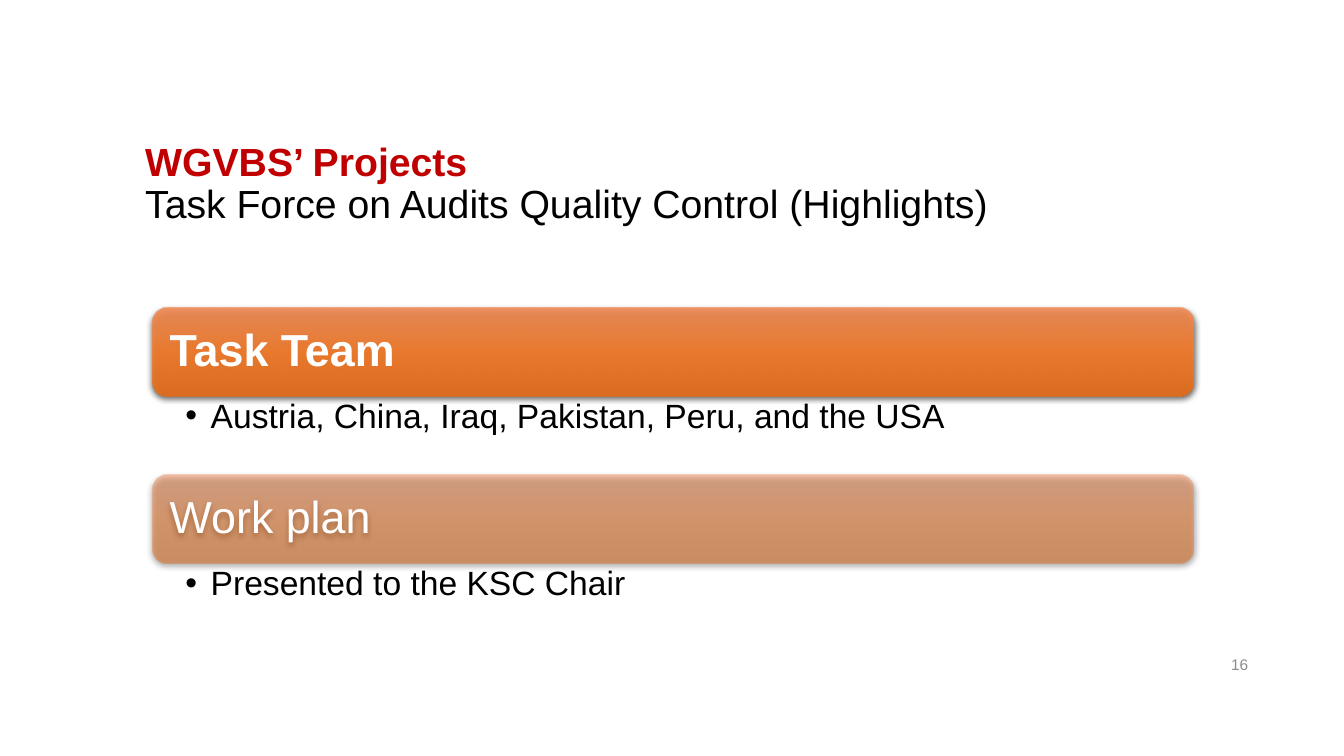
import dataclasses

import lxml.etree
import pptx
import pptx.dml.color
import pptx.enum.shapes
import pptx.enum.text
import pptx.oxml
import pptx.oxml.ns
import pptx.shapes.autoshape
import pptx.slide
import pptx.text.text
import pptx.util

Inches = pptx.util.Inches
ALIGN = pptx.enum.text.PP_ALIGN
ANCHOR = pptx.enum.text.MSO_ANCHOR

COLORS = {
    "heading": "C00000",
    "text": "000000",
    "label": "FFFFFF",
    "number": "8C8C8C",
    "bar_top": "F18C57",
    "bar_middle": "F67B28",
    "bar_bottom": "E56C19",
    "shadow": "000000",
}
LEFT, WIDTH = 1.51, 10.33
FIRST_TOP, BAR_HEIGHT, LIST_HEIGHT = 3.05, 0.88, 0.78
SECTION_STEP = BAR_HEIGHT + LIST_HEIGHT


@dataclasses.dataclass
class Section:
    label: str
    detail: str
    opacity: int
    bold: bool


SECTIONS = [
    Section("Task Team", "Austria, China, Iraq, Pakistan, Peru, and the USA", 90, True),
    Section("Work plan", "Presented to the KSC Chair", 50, False),
]


def write(paragraph: pptx.text.text._Paragraph, text: str, *, size: float,
          color: str, bold: bool = False) -> None:
    run = paragraph.add_run()
    run.text = text
    run.font.name = "Arial"
    run.font.size = pptx.util.Pt(size)
    run.font.bold = bold
    run.font.color.rgb = pptx.dml.color.RGBColor.from_string(COLORS[color])


def place(shape: pptx.shapes.autoshape.Shape, left: float, top: float,
          width: float, height: float) -> None:
    shape.left, shape.top = Inches(left), Inches(top)
    shape.width, shape.height = Inches(width), Inches(height)


def prepare_text(shape: pptx.shapes.autoshape.Shape, *, anchor: ANCHOR,
                 align: ALIGN = ALIGN.LEFT,
                 insets: tuple[float, float, float, float] = (0.1, 0.05, 0.1, 0.05),
                 ) -> pptx.text.text._Paragraph:
    """Set up the text frame and return its first paragraph."""
    frame = shape.text_frame
    frame.word_wrap = True
    frame.auto_size = pptx.enum.text.MSO_AUTO_SIZE.NONE
    frame.vertical_anchor = anchor
    (frame.margin_left, frame.margin_top,
     frame.margin_right, frame.margin_bottom) = map(Inches, insets)
    paragraph = frame.paragraphs[0]
    paragraph.alignment = align
    paragraph.line_spacing = 0.9
    paragraph.space_before = pptx.util.Pt(0)
    return paragraph


def apply_glass_style(bar: pptx.shapes.autoshape.Shape, opacity: int) -> None:
    """Give the bar a translucent vertical gradient and a soft shadow."""
    bar.line.fill.background()
    stops = "".join(
        f'<a:gs pos="{position * 1000}"><a:srgbClr val="{COLORS[name]}">'
        f'<a:alpha val="{opacity * 1000}"/></a:srgbClr></a:gs>'
        for position, name in ((0, "bar_top"), (50, "bar_middle"), (100, "bar_bottom"))
    )
    namespace = pptx.oxml.ns.nsdecls("a")
    gradient = pptx.oxml.parse_xml(
        f'<a:gradFill {namespace} rotWithShape="1"><a:gsLst>{stops}</a:gsLst>'
        '<a:lin ang="5400000" scaled="0"/></a:gradFill>')
    effects = pptx.oxml.parse_xml(
        f'<a:effectLst {namespace}><a:outerShdw blurRad="{pptx.util.Pt(4.5)}" '
        f'dist="{pptx.util.Pt(1.5)}" dir="5400000" algn="ctr" rotWithShape="0">'
        f'<a:srgbClr val="{COLORS["shadow"]}"><a:alpha val="63000"/></a:srgbClr>'
        '</a:outerShdw></a:effectLst>')
    properties = bar._element.spPr
    properties.find(pptx.oxml.ns.qn("a:prstGeom")).addnext(gradient)
    properties.append(effects)


def add_bullet(paragraph: pptx.text.text._Paragraph) -> None:
    paragraph.level = 1
    properties = paragraph._p.get_or_add_pPr()
    properties.set("marL", str(Inches(0.25)))
    properties.set("indent", str(Inches(-0.25)))
    font = lxml.etree.SubElement(properties, pptx.oxml.ns.qn("a:buFont"))
    font.set("typeface", "Arial")
    bullet = lxml.etree.SubElement(properties, pptx.oxml.ns.qn("a:buChar"))
    bullet.set("char", "•")


def add_section(slide: pptx.slide.Slide, section: Section,
                details: pptx.shapes.autoshape.Shape, top: float) -> None:
    bar = slide.shapes.add_shape(
        pptx.enum.shapes.MSO_SHAPE.ROUNDED_RECTANGLE,
        Inches(LEFT), Inches(top), Inches(WIDTH), Inches(BAR_HEIGHT))
    apply_glass_style(bar, section.opacity)
    label = prepare_text(bar, anchor=ANCHOR.MIDDLE, insets=(0.13,) * 4)
    write(label, section.label, size=32, color="label", bold=section.bold)

    place(details, LEFT, top + BAR_HEIGHT, WIDTH, LIST_HEIGHT)
    item = prepare_text(details, anchor=ANCHOR.TOP, insets=(0.33, 0.03, 0.19, 0.03))
    add_bullet(item)
    write(item, section.detail, size=24, color="text")


def main() -> None:
    presentation = pptx.Presentation()
    presentation.slide_width = Inches(13.33)
    presentation.slide_height = Inches(7.5)
    two_content = presentation.slide_layouts[3]
    slide = presentation.slides.add_slide(two_content)

    title = slide.shapes.title
    place(title, 1.34, 1.12, 11.84, 1.42)
    heading = prepare_text(title, anchor=ANCHOR.MIDDLE)
    write(heading, "WGVBS’ Projects", size=28, color="heading", bold=True)
    heading.add_line_break()
    write(heading, "Task Force on Audits Quality Control (Highlights)",
          size=28, color="text")

    for index, section in enumerate(SECTIONS):
        add_section(slide, section, slide.placeholders[index + 1],
                    FIRST_TOP + index * SECTION_STEP)

    page = slide.shapes.add_textbox(Inches(9.48), Inches(6.39), Inches(3), Inches(0.4))
    page_number = prepare_text(page, anchor=ANCHOR.MIDDLE, align=ALIGN.RIGHT)
    page_number.line_spacing = 1.0
    write(page_number, "16", size=11, color="number")

    presentation.save("out.pptx")


if __name__ == "__main__":
    main()
